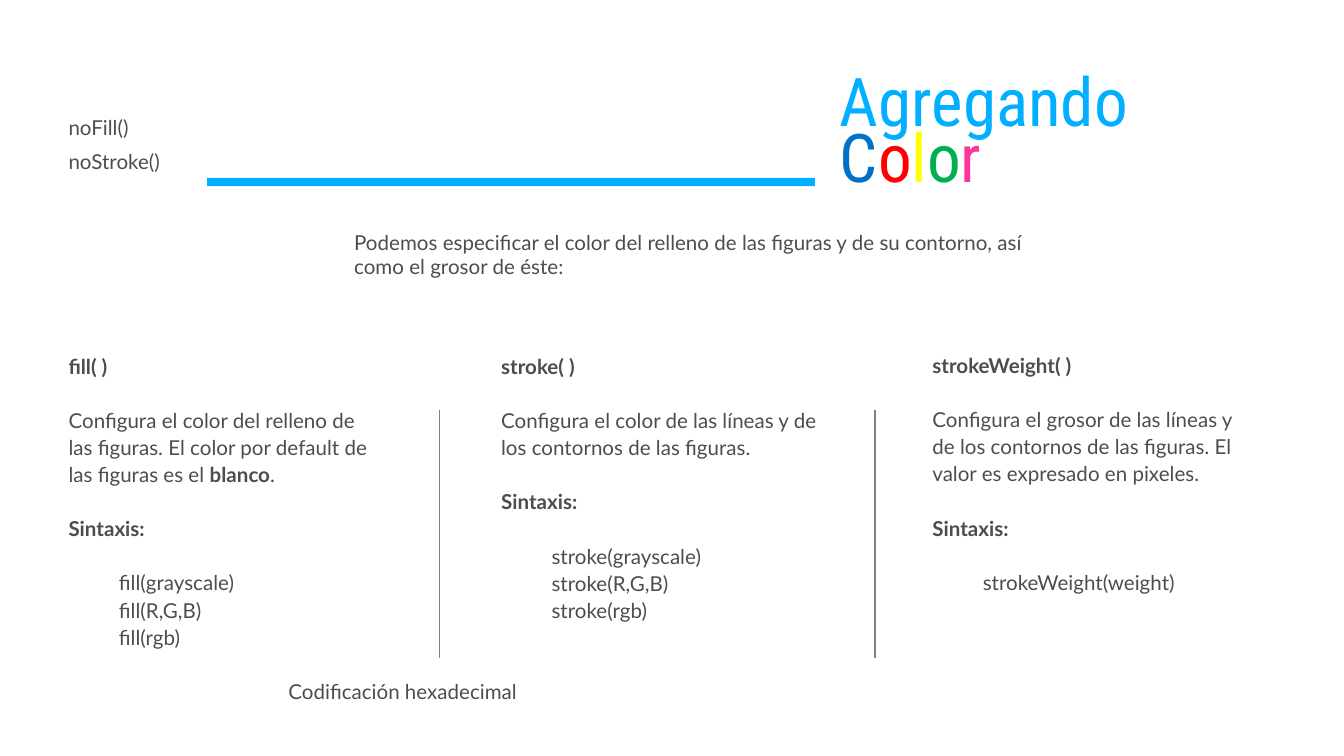
from lxml.etree import SubElement
from pptx import Presentation
from pptx.dml.color import RGBColor
from pptx.enum.shapes import MSO_CONNECTOR as Connector, MSO_SHAPE as Shape
from pptx.enum.text import MSO_ANCHOR as Anchor
from pptx.oxml.ns import qn
from pptx.util import Emu, Pt

EMU_PER_PX = 9525
BLUE, GRAY, TEXT = "00AFFF", "808080", "4D4D4D"
BODY_FONT, TITLE_FONT = "Lato", "Roboto Condensed"
LINE_GAP = 14.5  # points, one line of column text
CODE_INDENT = 36

TITLE = [
    [("Agregando", BLUE)],
    [("C", "0071C5"), ("o", "FF0000"), ("l", "FFFF00"), ("o", "00B050"), ("r", "FF3399")],
]

# box, heading, description runs (text, bold), syntax lines, free lines at the bottom
COLUMNS = [
    ((49, 222, 219, 290), "fill( )",
     [("Configura el color del relleno de las figuras. "
       "El color por default de las figuras es el ", False),
      ("blanco", True), (".", False)],
     ["fill(grayscale)", "fill(R,G,B)", "fill(rgb)"], 1),
    ((358, 220, 235, 275), "stroke( )",
     [("Configura el color de las líneas y de los contornos de las figuras.", False)],
     ["stroke(grayscale)", "stroke(R,G,B)", "stroke(rgb)"], 1),
    ((666, 235, 228, 263), "strokeWeight( )",
     [("Configura el grosor de las líneas y de los contornos de las figuras. "
       "El valor es expresado en pixeles.", False)],
     ["strokeWeight(weight)"], 3),
]


def px(value):
    return Emu(value * EMU_PER_PX)


def color(hex_string):
    return RGBColor.from_string(hex_string)


def add_text_frame(slide, box, anchor=Anchor.MIDDLE):
    frame = slide.shapes.add_textbox(*map(px, box)).text_frame
    frame.word_wrap = True
    frame.vertical_anchor = anchor
    frame.margin_left = frame.margin_top = frame.margin_right = frame.margin_bottom = 0
    return frame


def add_paragraph(frame, runs, spacing, font=BODY_FONT, size=11):
    """Add (text, bold) runs, using the frame's first paragraph while it is empty."""
    first = frame.paragraphs[0]
    paragraph = frame.add_paragraph() if first.runs else first
    paragraph.line_spacing = spacing
    paragraph.font.name = font
    paragraph.font.size = Pt(size)
    paragraph.font.color.rgb = color(TEXT)
    for text, bold in runs:
        run = paragraph.add_run()
        run.text = text
        run.font.bold = bold
    return paragraph


def add_note(slide, box, lines, spacing=1.4, anchor=Anchor.MIDDLE):
    frame = add_text_frame(slide, box, anchor)
    for line in lines:
        add_paragraph(frame, [(line, False)], spacing)


def add_title(slide, box):
    frame = add_text_frame(slide, box)
    for letters in TITLE:
        runs = [(text, False) for text, _ in letters]
        paragraph = add_paragraph(frame, runs, 0.7, TITLE_FONT, 36)
        for run, (_, hex_string) in zip(paragraph.runs, letters):
            run.font.color.rgb = color(hex_string)


def add_column(slide, box, heading, description, syntax, free_lines):
    frame = add_text_frame(slide, box)
    frame.margin_bottom = Pt(LINE_GAP * free_lines)
    add_paragraph(frame, [(heading, True)], 1.1)
    for runs in (description, [("Sintaxis:", True)]):
        add_paragraph(frame, runs, 1.1).space_before = Pt(LINE_GAP)
    for index, line in enumerate(syntax):
        paragraph = add_paragraph(frame, [(line, False)], 1.1)
        paragraph.level = 1
        properties = paragraph._p.get_or_add_pPr()
        properties.set("marL", str(px(CODE_INDENT)))
        properties.set("indent", "0")
        paragraph.space_before = Pt(0 if index else LINE_GAP)


def add_bar(slide, box):
    bar = slide.shapes.add_shape(Shape.RECTANGLE, *map(px, box))
    bar.shadow.inherit = False
    bar.fill.solid()
    bar.fill.fore_color.rgb = color(BLUE)
    bar.line.fill.background()


def add_divider(slide, x, bottom=470, top=293):
    divider = slide.shapes.add_connector(Connector.STRAIGHT, px(x), px(bottom), px(x), px(top))
    divider.line.color.rgb = color(GRAY)
    divider.line.width = Pt(1)
    SubElement(divider._element.spPr, qn("a:effectLst"))


def main():
    presentation = Presentation()
    presentation.slide_width, presentation.slide_height = px(960), px(540)
    slide = presentation.slides.add_slide(presentation.slide_layouts[6])
    add_title(slide, (600, 20, 241, 157))
    add_note(slide, (253, 164, 492, 45),
             ["Podemos especificar el color del relleno de las figuras y de su contorno, "
              "así como el grosor de éste:"], 1, Anchor.TOP)
    add_bar(slide, (148, 127, 434, 6))
    for column in COLUMNS:
        add_column(slide, *column)
    for x in (314, 625):
        add_divider(slide, x)
    add_note(slide, (206, 468, 241, 45), ["Codificación hexadecimal"])
    add_note(slide, (49, 77, 110, 45), ["noFill()", "noStroke()"])
    presentation.save("out.pptx")


if __name__ == "__main__":
    main()
